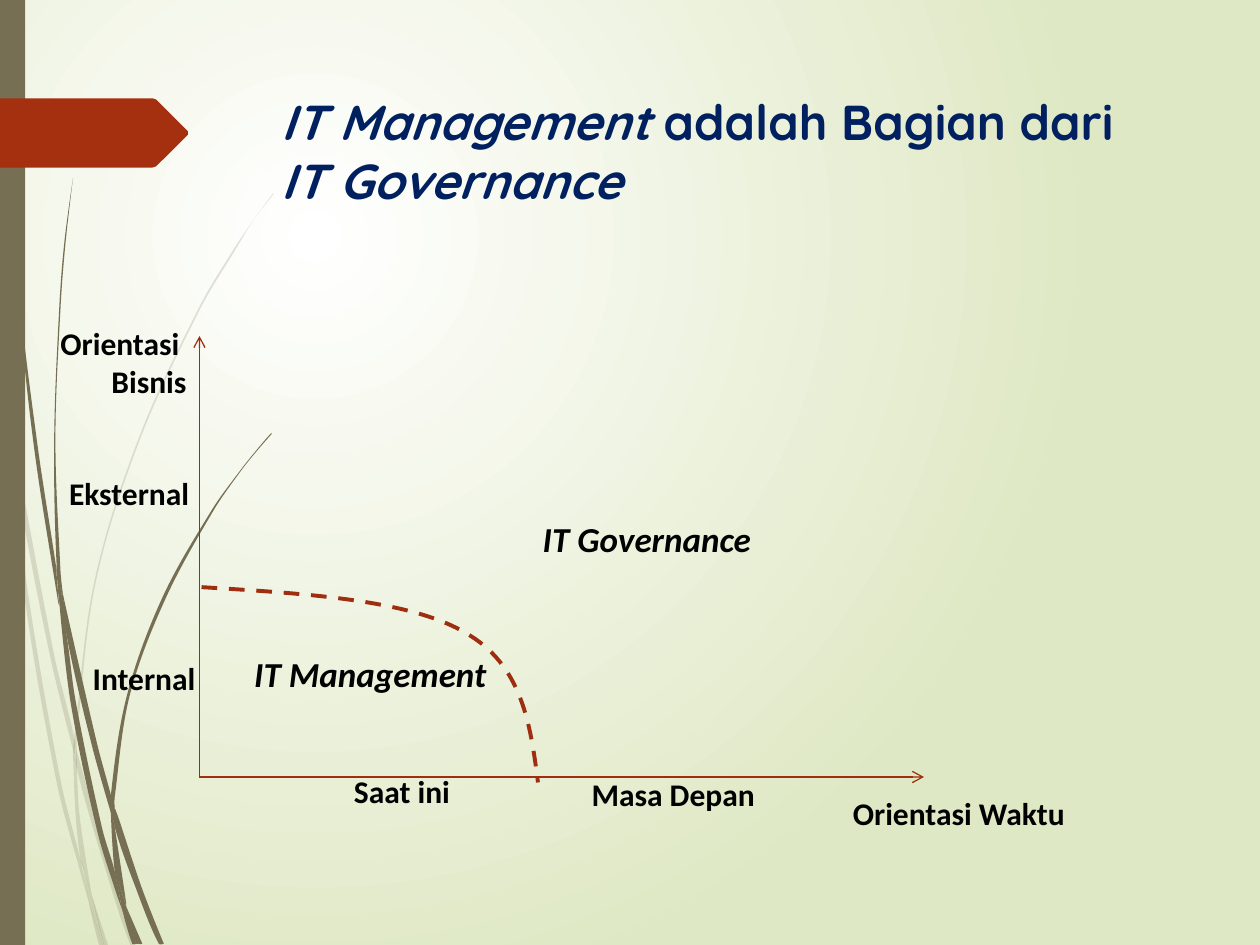
"""Build a slide that places IT Management inside IT Governance on two axes."""
from math import hypot
from lxml.etree import SubElement
from pptx import Presentation
from pptx.dml.color import RGBColor
from pptx.enum.dml import MSO_LINE
from pptx.enum.shapes import MSO_CONNECTOR, MSO_SHAPE
from pptx.enum.text import MSO_ANCHOR, MSO_AUTO_SIZE, PP_ALIGN
from pptx.oxml.ns import qn
from pptx.util import Cm, Pt

WHITE = RGBColor(0xFF, 0xFF, 0xFF)
PALE_GREEN = RGBColor(0xDF, 0xE8, 0xC4)
OLIVE = RGBColor(0x76, 0x6F, 0x54)
RED = RGBColor(0xA5, 0x30, 0x10)
DARK_RED = RGBColor(0x9E, 0x2E, 0x0F)
NAVY = RGBColor(0x00, 0x20, 0x60)
BLACK = RGBColor(0, 0, 0)
CM_PER_UNIT = 2.54

TITLE_LINES = [
    [("IT Management ", True), ("adalah Bagian dari ", False)],
    [("IT Governance", True)],
]
AXIS_LABELS = [
    ("Orientasi Waktu", 6.67, 6.25, 2.14, 0.4, PP_ALIGN.LEFT),
    ("Orientasi \vBisnis", 0.21, 2.52, 1.37, 0.71, PP_ALIGN.RIGHT),
    ("Eksternal", 0.29, 3.71, 1.31, 0.4, PP_ALIGN.RIGHT),
    ("Internal", 0.51, 5.18, 1.14, 0.4, PP_ALIGN.RIGHT),
    ("Saat ini", 2.59, 6.08, 1.08, 0.4, PP_ALIGN.RIGHT),
    ("Masa Depan", 4.45, 6.1, 1.64, 0.4, PP_ALIGN.RIGHT),
]
AREA_LABELS = [
    ("IT Management", 1.78, 5.13, 2.18, 0.44, PP_ALIGN.RIGHT),
    ("IT Governance", 4.06, 4.06, 2, 0.44, PP_ALIGN.RIGHT),
]
AXIS_ORIGIN = (19 / 12, 74 / 12)
AXIS_ENDS = [(88 / 12, 74 / 12), (19 / 12, 32 / 12)]
BOUNDARY_START = (1.6, 4.66)
BOUNDARY = [
    [(2.42, 4.71), (3.25, 4.76), (3.69, 5.02)],
    [(4.14, 5.27), (4.21, 5.74), (4.27, 6.21)],
]
TAG = [(1.49, 1.07), (1.24, 1.32), (1.21, 1.33), (0, 1.33), (0, 0.78), (1.21, 0.78),
       (1.24, 0.79), (1.49, 1.04)]
PALE_BLADES = [
    [(0.08, 3.5), (0.06, 3.22), (0, 2.82), (0, 2.99), (0.07, 3.44)],
    [(0.4, 5.22), (0.59, 5.99), (0.59, 5.86), (0.43, 5.2), (0.1, 3.45), (0.12, 3.76)],
    [(0.64, 6.07), (0.61, 5.96), (0.61, 6.1), (0.85, 6.94), (1.04, 7.51), (1.08, 7.51),
     (0.88, 6.92)],
    [(0.83, 7.51), (0.86, 7.51), (0.73, 7.11)],
    [(0.64, 6.83), (0.48, 6.19), (0.22, 4.69), (0.12, 3.76), (0.08, 3.5), (0.19, 4.7),
     (0.45, 6.21), (0.64, 6.93), (0.7, 7.14), (0.69, 7.07)],
    [(0.58, 5.99), (0.6, 6.46), (0.64, 6.83), (0.67, 6.92), (0.73, 7.11), (0.72, 7.06),
     (0.63, 6.46), (0.61, 6.1), (0.61, 6.08)],
    [(0.61, 5.84), (0.76, 4.62), (1.11, 3.49), (1.59, 2.45), (1.87, 1.98), (2.01, 1.75),
     (2.17, 1.54), (2.17, 1.53), (2.01, 1.75), (1.86, 1.97), (1.58, 2.44), (1.1, 3.48),
     (0.75, 4.61), (0.59, 5.84), (0.59, 5.86), (0.61, 5.96)],
    [(0.7, 7.14), (0.79, 7.51), (0.82, 7.51)],
    [(0.61, 6.08), (0.61, 6.1), (0.61, 5.96), (0.59, 5.86), (0.58, 5.99)],
    [(0.67, 6.92), (0.65, 6.83), (0.69, 7.07), (0.7, 7.14), (0.82, 7.51), (0.83, 7.51),
     (0.73, 7.11)],
]
DARK_BLADES = [
    [(0.05, 1.1), (0.14, 2.33), (0.27, 3.55), (0.46, 4.77), (0.47, 4.81), (0.45, 4.57),
     (0.45, 4.53), (0.3, 3.55), (0.15, 2.32), (0.06, 1.09), (0.04, 0.48), (0.03, 0),
     (0.02, 0), (0.03, 0.48)],
    [(0.73, 5.92), (0.88, 6.45), (0.88, 6.33), (0.88, 6.31), (0.77, 5.9), (0.5, 4.72),
     (0.53, 5.05)],
    [(0.94, 6.49), (0.91, 6.41), (0.91, 6.56), (1.09, 7.08), (1.26, 7.49), (1.3, 7.49),
     (1.13, 7.06)],
    [(0.91, 6.91), (0.81, 6.57), (0.6, 5.56), (0.53, 5.05), (0.47, 4.77), (0.56, 5.57),
     (0.77, 6.59), (0.92, 7.08), (0.97, 7.22), (0.96, 7.17)],
    [(0.5, 4.72), (0.48, 4.53), (0.44, 3.49), (0.48, 2.45), (0.52, 1.93), (0.58, 1.41),
     (0.51, 1.93), (0.47, 2.45), (0.43, 3.49), (0.45, 4.49), (0.49, 4.72)],
    [(1.1, 7.49), (1.13, 7.49), (1, 7.19)],
    [(0.47, 4.77), (0.53, 5.05), (0.5, 4.72), (0.49, 4.72), (0.45, 4.49), (0.45, 4.53)],
    [(0.91, 6.33), (1.03, 5.52), (1.31, 4.76), (1.69, 4.06), (1.91, 3.74), (2.03, 3.59),
     (2.16, 3.44), (2.15, 3.44), (2.03, 3.58), (1.91, 3.73), (1.68, 4.05), (1.29, 4.74),
     (1.01, 5.51), (0.88, 6.31), (0.91, 6.41)],
    [(0.97, 7.22), (1.05, 7.49), (1.08, 7.49)],
    [(0.88, 6.45), (0.91, 6.91), (0.96, 7.06), (1, 7.19), (1, 7.16), (0.91, 6.56),
     (0.9, 6.51)],
    [(0.88, 6.45), (0.9, 6.51), (0.91, 6.56), (0.91, 6.41), (0.88, 6.31), (0.88, 6.33)],
    [(0.96, 7.06), (0.91, 6.91), (0.96, 7.17), (0.97, 7.22), (1.08, 7.49), (1.1, 7.49),
     (1, 7.19)],
]


def lengths(*units):
    return [Cm(unit * CM_PER_UNIT) for unit in units]


def tangent(before, point, after):
    (x0, y0), (x, y), (x1, y1) = before, point, after
    is_corner = (x - x0) * (x1 - x) + (y - y0) * (y1 - y) <= 0
    span = hypot(x1 - x0, y1 - y0)
    return (0, 0) if is_corner else ((x1 - x0) / span, (y1 - y0) / span)


def smooth_segments(points):
    count = len(points)
    tangents = [tangent(points[i - 1], points[i], points[(i + 1) % count]) for i in range(count)]
    for i, (x, y) in enumerate(points):
        following = (i + 1) % count
        end_x, end_y = points[following]
        reach = hypot(end_x - x, end_y - y) / 3
        (dx, dy), (end_dx, end_dy) = tangents[i], tangents[following]
        yield [(x + dx * reach, y + dy * reach),
               (end_x - end_dx * reach, end_y - end_dy * reach), (end_x, end_y)]


def add_outline(slide, start, points, close):
    builder = slide.shapes.build_freeform(*lengths(*start))
    builder.add_line_segments([lengths(*point) for point in points], close=close)
    shape = builder.convert_to_shape()
    shape.shadow.inherit = False
    return shape


def add_curve(slide, start, segments, close):
    segments = list(segments)
    shape = add_outline(slide, start, [segment[-1] for segment in segments], close)
    lines = list(shape._element.iter(qn("a:lnTo")))
    for line, segment in zip(lines, segments):
        line.tag = qn("a:cubicBezTo")
        line.remove(line[0])
        for x, y in (lengths(*point) for point in segment):
            SubElement(line, qn("a:pt"), x=str(x - shape.left), y=str(y - shape.top))
    return shape


def paint(shape, color, opacity=100):
    shape.shadow.inherit = False
    shape.fill.solid()
    shape.fill.fore_color.rgb = color
    shape.line.fill.background()
    if opacity < 100:
        color_element = shape._element.spPr.find(f"{qn('a:solidFill')}/{qn('a:srgbClr')}")
        SubElement(color_element, qn("a:alpha"), val=str(opacity * 1000))


def set_background(slide):
    fill = slide.background.fill
    fill.gradient()
    for stop, color in zip(fill.gradient_stops, (WHITE, PALE_GREEN)):
        stop.color.rgb = color
    gradient = slide._element.find(f".//{qn('a:gradFill')}")
    gradient.remove(gradient.find(qn("a:lin")))
    circle = SubElement(gradient, qn("a:path"), path="circle")
    SubElement(circle, qn("a:fillToRect"), l="50000", t="50000", r="100000", b="100000")


def add_decoration(slide):
    for blades, opacity in ((PALE_BLADES, 20), (DARK_BLADES, 100)):
        for points in blades:
            paint(add_curve(slide, points[0], smooth_segments(points), True), OLIVE, opacity)
    paint(slide.shapes.add_shape(MSO_SHAPE.RECTANGLE, *lengths(0, 0, 0.2, 7.5)), OLIVE)
    paint(add_outline(slide, TAG[0], TAG[1:], True), RED)


def fill_title(title):
    title.left, title.top, title.width, title.height = lengths(2.13, 0.68, 7.21, 1.4)
    frame = title.text_frame
    frame.auto_size = MSO_AUTO_SIZE.NONE
    frame.vertical_anchor = MSO_ANCHOR.TOP
    paragraph = frame.paragraphs[0]
    paragraph.alignment = PP_ALIGN.LEFT
    for number, line in enumerate(TITLE_LINES):
        if number:
            paragraph.add_line_break()
        for text, italic in line:
            run = paragraph.add_run()
            run.text = text
            run.font.name, run.font.size = "Quicksand", Pt(28)
            run.font.bold, run.font.italic = True, italic
            run.font.color.rgb = NAVY


def add_axis(slide, end):
    axis = slide.shapes.add_connector(MSO_CONNECTOR.STRAIGHT, *lengths(*AXIS_ORIGIN, *end))
    axis.line.color.rgb = DARK_RED
    axis.line.width = Pt(0.75)
    SubElement(axis.line._get_or_add_ln(), qn("a:tailEnd"), type="arrow")
    SubElement(axis._element.spPr, qn("a:effectLst"))


def add_boundary(slide):
    curve = add_curve(slide, BOUNDARY_START, BOUNDARY, False)
    curve.fill.background()
    curve.line.color.rgb = DARK_RED
    curve.line.width = Pt(2.25)
    curve.line.dash_style = MSO_LINE.DASH


def add_label(slide, label, size, italic):
    text, *place, alignment = label
    frame = slide.shapes.add_textbox(*lengths(*place)).text_frame
    frame.word_wrap = False
    frame.auto_size = MSO_AUTO_SIZE.SHAPE_TO_FIT_TEXT
    paragraph = frame.paragraphs[0]
    paragraph.text = text
    paragraph.alignment = alignment
    font = paragraph.font
    font.name, font.size, font.bold, font.italic = "Calibri", Pt(size), True, italic
    font.color.rgb = BLACK


def main():
    presentation = Presentation()
    presentation.slide_width, presentation.slide_height = lengths(10, 7.5)
    slide = presentation.slides.add_slide(presentation.slide_layouts[5])
    set_background(slide)
    add_decoration(slide)
    fill_title(slide.shapes.title)
    for end in AXIS_ENDS:
        add_axis(slide, end)
    add_boundary(slide)
    for labels, size, italic in ((AXIS_LABELS, 18, False), (AREA_LABELS, 20, True)):
        for label in labels:
            add_label(slide, label, size, italic)
    presentation.save("out.pptx")


if __name__ == "__main__":
    main()
